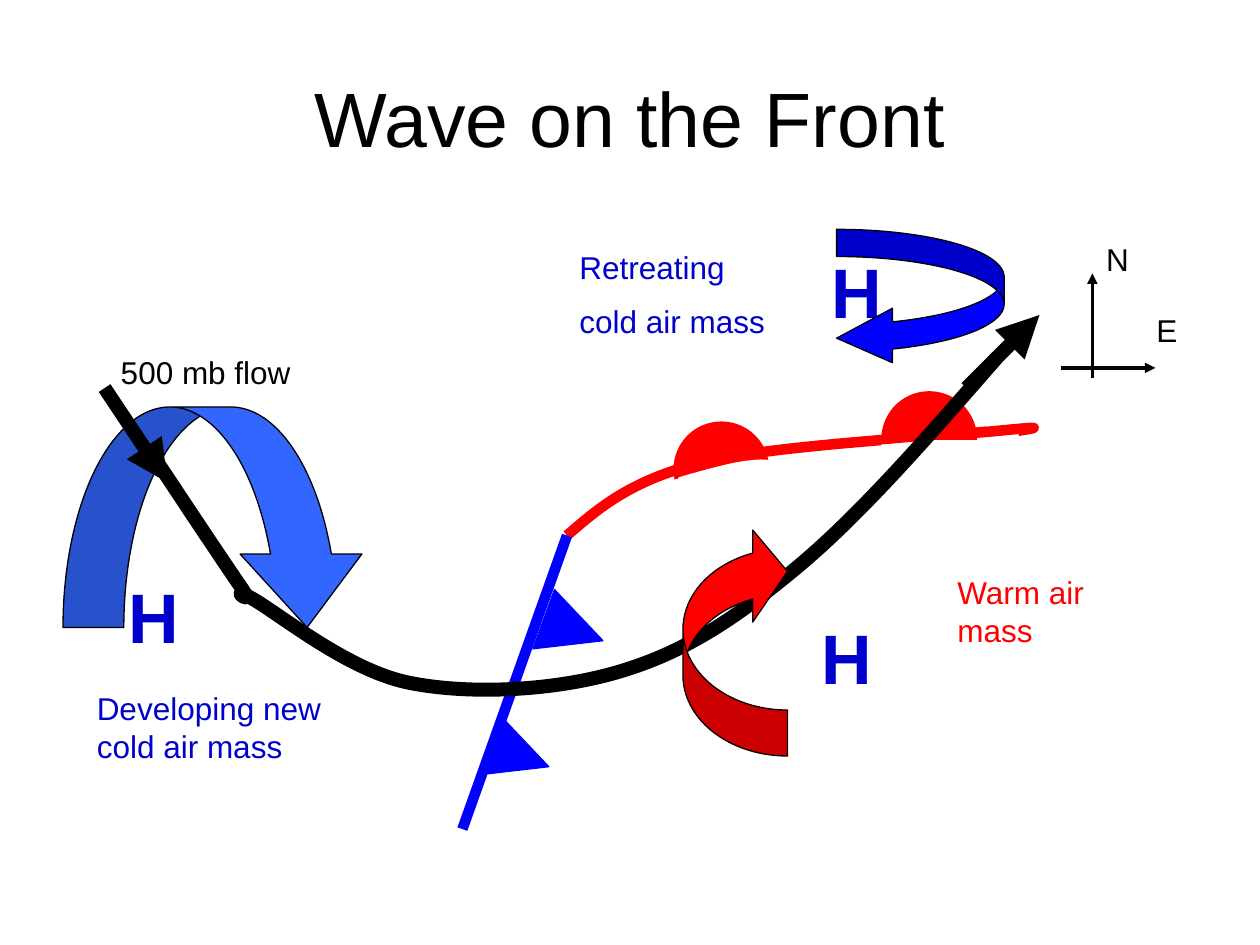
from lxml import etree
from pptx import Presentation
from pptx import util as u
from pptx.dml.color import RGBColor
from pptx.enum import shapes, text
from pptx.oxml.ns import qn

COLORS = {"black": "000000", "white": "FFFFFF", "red": "FF0000", "blue": "0000FF",
          "navy": "0000CC", "sky": "3366FF"}
FONT = "Arial"
BODY_SIZE, HIGH_SIZE, TITLE_SIZE = 18, 40, 44
OUTLINE, COMPASS_WIDTH, WARM_TAIL_WIDTH, FRONT_WIDTH, FLOW_WIDTH = 0.75, 2, 5, 6, 8
KIND = shapes.MSO_SHAPE

TITLE = ((0.5, 0.3, 9, 1.25), "Wave on the Front")
LABELS = {
    "flow": ((0.86, 2.75, 2.58, 0.4), "500 mb flow", "black"),
    "retreating": ((4.5, 1.92, 1.83, 0.85), "Retreating\ncold air mass", "navy"),
    "warm": ((7.5, 4.5, 1.75, 0.7), "Warm air mass", "red"),
    "developing": ((0.67, 5.42, 2, 0.7), "Developing new cold air mass", "navy"),
    "north": ((8.68, 1.86, 0.33, 0.4), "N", "black"),
    "east": ((9.08, 2.42, 0.42, 0.4), "E", "black"),
}
HIGHS = [(0.92, 4.5, 0.75), (6.42, 4.83, 1.08), (6.5, 1.92, 1.33)]
HIGH_HEIGHT = 0.77

FRONT_CENTRE = (4.5, 4.25)
WARM_FRONT = [FRONT_CENTRE, (5.58, 3.67), (7.92, 3.42), (8.08, 3.42)]
WARM_TAIL = ((6.92, 3.5), (7.83, 3.42))
WARM_BUMPS = [(5.35, 3.35), (7, 3.11)]
BUMP_SIZE = 0.75
BUMP_CURVED_BASE = [(5.36, 3.81), (5.49, 3.79), (5.4, 3.79), (5.87, 3.67), (6.14, 3.67),
                    (6.1, 3.84), (5.79, 4.06), (5.56, 4.02), (5.36, 3.86), (5.36, 3.81)]
BUMP_BASES = [(5.25, 3.83, 1.25, 0.5), (7, 3.5, 0.92, 0.42)]

COLD_FRONT_END = (3.67, 6.58)
COLD_TEETH = [(4.3, 4.75), (3.87, 5.75)]
TOOTH_SIZE, TOOTH_ANGLE = 0.5, 110

FLOW = [(1.25, 3.67), (1.92, 4.67), (2, 4.75), (3.25, 5.42),
        (4.92, 5.33), (6.33, 4.5), (7.92, 2.83)]
FLOW_ENTRY = ((0.83, 3.08), (1.33, 3.83))
FLOW_EXIT = ((7.67, 3.08), (8.25, 2.5))

WARM_TURN = (KIND.CURVED_LEFT_ARROW, (5.42, 4.17, 0.83, 1.83), "red", 180, (0.44, 0.88, 0.333))
COLD_TURN = (KIND.CURVED_DOWN_ARROW, (0.5, 3.23, 2.42, 1.75), "sky", 0, (0.276, 0.552, 0.333))
RETREAT_TURN = (KIND.CURVED_LEFT_ARROW, (6.64, 1.82, 1.33, 1.08), "blue", 0, (0.2, 0.4, 0.41))

COMPASS_AXES = {"north": ((8.67, 3), (8.67, 2.17)), "east": ((8.42, 2.92), (9.17, 2.92))}

deck = Presentation()
deck.slide_width, deck.slide_height = u.Inches(10), u.Inches(7.5)
slide = deck.slides.add_slide(deck.slide_layouts[6])


def rgb(color):
    return RGBColor.from_string(COLORS[color])


def inches(values):
    return [u.Inches(value) for value in values]


def shift(point, start, end, share):
    return tuple(p + (b - a) * share for p, a, b in zip(point, start, end))


def smooth_segments(knots):
    arriving, leaving = {}, {}
    last = len(knots) - 1
    for i in range(1, last):
        before, knot, after = knots[i - 1:i + 2]
        arriving[i] = shift(knot, before, after, -1 / 6)
        leaving[i] = shift(knot, before, after, 1 / 6)
    leaving[0] = shift(knots[0], knots[0], arriving[1], 1 / 2)
    arriving[last] = shift(knots[last], knots[last], leaving[last - 1], 1 / 2)
    return [(leaving[i], arriving[i + 1], knots[i + 1]) for i in range(last)]


def paint(shape, fill, line, width=OUTLINE):
    shape.shadow.inherit = False
    if fill:
        shape.fill.solid()
        shape.fill.fore_color.rgb = rgb(fill)
    else:
        shape.fill.background()
    shape.line.color.rgb = rgb(line)
    shape.line.width = u.Pt(width)


def add_curve(knots, line, width, fill=None):
    builder = slide.shapes.build_freeform(*inches(knots[0]), scale=1.0)
    for segment in smooth_segments(knots):
        builder.add_line_segments([inches(point) for point in segment], close=False)
    curve = builder.convert_to_shape()
    paint(curve, fill, line, width)
    straight = list(curve.element.iter(qn("a:lnTo")))
    for first in range(0, len(straight), 3):
        bezier = etree.Element(qn("a:cubicBezTo"))
        straight[first].addprevious(bezier)
        for step in straight[first:first + 3]:
            bezier.append(step[0])
            step.getparent().remove(step)


def add_preset(kind, box, fill, rotation=0, adjustments=(), line=None):
    preset = slide.shapes.add_shape(kind, *inches(box))
    paint(preset, fill, line or fill)
    preset.rotation = rotation
    for index, value in enumerate(adjustments):
        preset.adjustments[index] = value


def add_line(start, end, color, width, arrow=False):
    connector = slide.shapes.add_connector(shapes.MSO_CONNECTOR.STRAIGHT, *inches(start + end))
    connector.line.color.rgb = rgb(color)
    connector.line.width = u.Pt(width)
    properties = connector.element.spPr
    if arrow:
        etree.SubElement(properties.find(qn("a:ln")), qn("a:tailEnd"), type="triangle")
    etree.SubElement(properties, qn("a:effectLst"))


def add_label(box, words, color, size=BODY_SIZE, bold=False):
    frame = slide.shapes.add_textbox(*inches(box)).text_frame
    frame.word_wrap = True
    frame.text = words
    for index, paragraph in enumerate(frame.paragraphs):
        if index:
            paragraph.space_before = u.Pt(size / 2)
        font = paragraph.runs[0].font
        font.name, font.size, font.bold = FONT, u.Pt(size), bold
        font.color.rgb = rgb(color)
    return frame


def draw_title():
    frame = add_label(*TITLE, "black", TITLE_SIZE)
    frame.vertical_anchor = text.MSO_ANCHOR.MIDDLE
    frame.paragraphs[0].alignment = text.PP_ALIGN.CENTER


def draw_warm_front():
    west_bump, east_bump = [(x, y, BUMP_SIZE, BUMP_SIZE) for x, y in WARM_BUMPS]
    add_curve(WARM_FRONT, "red", FRONT_WIDTH)
    add_preset(KIND.OVAL, west_bump, "red")
    add_curve(BUMP_CURVED_BASE, "white", OUTLINE, fill="white")
    add_preset(KIND.OVAL, east_bump, "red")
    for base in BUMP_BASES:
        add_preset(KIND.RECTANGLE, base, "white")
    add_line(*WARM_TAIL, "red", WARM_TAIL_WIDTH)


def draw_cold_front():
    add_line(FRONT_CENTRE, COLD_FRONT_END, "blue", FRONT_WIDTH)
    for x, y in COLD_TEETH:
        add_preset(KIND.ISOSCELES_TRIANGLE, (x, y, TOOTH_SIZE, TOOTH_SIZE), "blue", TOOTH_ANGLE)


def draw_flow_and_air_masses():
    add_curve(FLOW, "black", FLOW_WIDTH)
    add_line(*FLOW_EXIT, "black", FLOW_WIDTH, arrow=True)
    add_label(*LABELS["flow"])
    for x, y, width in HIGHS:
        add_label((x, y, width, HIGH_HEIGHT), "H", "navy", HIGH_SIZE, bold=True)
    for turn in (WARM_TURN, COLD_TURN):
        add_preset(*turn, line="black")
    add_line(*FLOW_ENTRY, "black", FLOW_WIDTH, arrow=True)
    add_preset(*RETREAT_TURN, line="black")
    for mass in ("retreating", "warm", "developing"):
        add_label(*LABELS[mass])


def draw_compass():
    for axis in COMPASS_AXES.values():
        add_line(*axis, "black", COMPASS_WIDTH, arrow=True)
    for direction in COMPASS_AXES:
        add_label(*LABELS[direction])


draw_title()
draw_warm_front()
draw_cold_front()
draw_flow_and_air_masses()
draw_compass()
deck.save("out.pptx")
